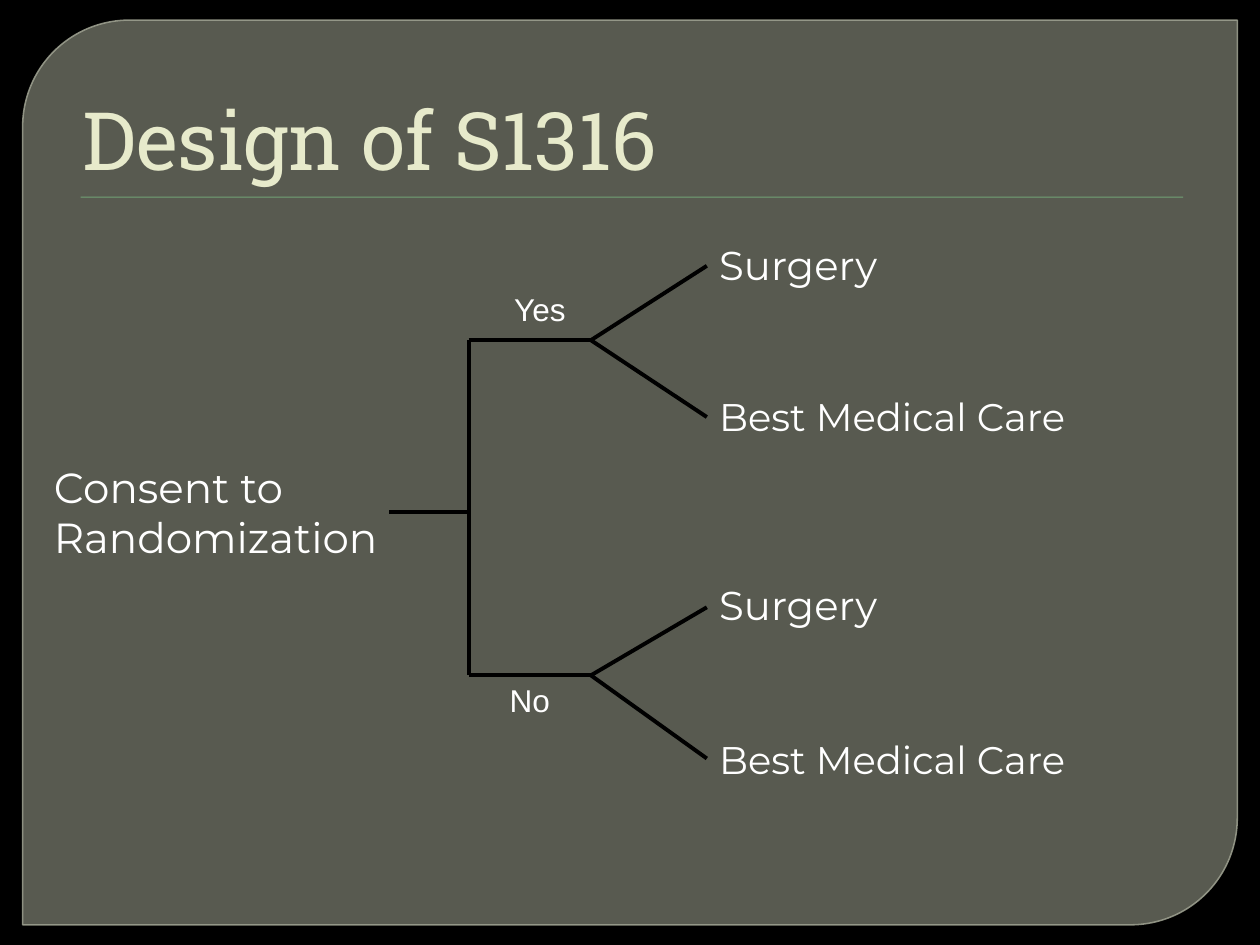
import pptx
import pptx.util
import pptx.dml.color
import pptx.enum.shapes
import pptx.enum.text
import pptx.oxml.ns
from dataclasses import dataclass
from lxml import etree
from pptx.util import Inches

SHAPE = pptx.enum.shapes.MSO_SHAPE
ALIGN = pptx.enum.text.PP_ALIGN
ANCHOR = pptx.enum.text.MSO_ANCHOR
qn = pptx.oxml.ns.qn


@dataclass(frozen=True)
class Theme:
    back: str = "000000"
    panel: str = "888B7B"
    panel_line: str = "9DA090"
    rule: str = "72A376"
    title: str = "E7EACB"
    text: str = "FFFFFF"
    branch: str = "000000"
    title_font: str = "Roboto Slab"
    body_font: str = "Montserrat"
    label_font: str = "Arial"
    title_size: float = 46
    root_size: float = 24
    surgery_size: float = 23
    care_size: float = 22
    label_size: float = 18
    branch_width: float = 2.25


T = Theme()


def rgb(color):
    return pptx.dml.color.RGBColor.from_string(color)


def set_alpha(fill_parent, percent):
    clr = fill_parent.find(qn("a:solidFill")).find(qn("a:srgbClr"))
    etree.SubElement(clr, qn("a:alpha")).set("val", str(percent * 1000))


def add_text(s, text, x, y, w, h, size, font=T.body_font, color=T.text,
             align=ALIGN.LEFT, anchor=ANCHOR.TOP, indent=0):
    tf = s.shapes.add_textbox(Inches(x), Inches(y), Inches(w), Inches(h)).text_frame
    tf.word_wrap = True
    tf.vertical_anchor = anchor
    p = tf.paragraphs[0]
    p.alignment = align
    if indent:
        p._p.get_or_add_pPr().set("marL", str(Inches(indent)))
    r = p.add_run()
    r.text = text
    r.font.size = pptx.util.Pt(size)
    r.font.name = font
    r.font.color.rgb = rgb(color)


def add_shape(s, kind, x, y, w, h, color):
    sp = s.shapes.add_shape(kind, Inches(x), Inches(y), Inches(w), Inches(h))
    sp.shadow.inherit = False
    sp.fill.solid()
    sp.fill.fore_color.rgb = rgb(color)
    sp.line.fill.background()
    return sp


def add_line(s, x1, y1, x2, y2):
    ln = s.shapes.add_connector(pptx.enum.shapes.MSO_CONNECTOR.STRAIGHT,
                                Inches(x1), Inches(y1), Inches(x2), Inches(y2))
    ln.line.color.rgb = rgb(T.branch)
    ln.line.width = pptx.util.Pt(T.branch_width)
    etree.SubElement(ln._element.spPr, qn("a:effectLst"))


def add_panel(s, x, y, w, h):
    sp = add_shape(s, SHAPE.ROUND_2_DIAG_RECTANGLE, x, y, w, h, T.panel)
    sp.adjustments[0] = 0.118
    sp.adjustments[1] = 0
    sp.line.color.rgb = rgb(T.panel_line)
    sp.line.width = pptx.util.Pt(0.87)
    set_alpha(sp._element.spPr, 65)
    set_alpha(sp._element.spPr.find(qn("a:ln")), 88)


def add_heading(s, text, x, y, w, h):
    add_shape(s, SHAPE.RECTANGLE, x + 0.14, y + h + 0.03, w - 0.25, 0.01, T.rule)
    add_text(s, text, x, y, w, h, T.title_size, T.title_font, T.title,
             anchor=ANCHOR.BOTTOM, indent=0.06)


def add_tree(s, x, y, w):
    trunk, fork, leaf = x + 3.39, x + 4.36, x + 5.28
    stem_y = y + 2.2

    # Root and its stem
    add_text(s, "Consent to Randomization", x, y + 1.75, 3, 0.91, T.root_size)
    add_line(s, x + 2.76, stem_y, trunk, stem_y)

    # Answer, its label offset, branch height, line ends and text tops
    answers = [
        ("Yes", 0.08, -0.45, 0.84, (0.25, 1.45), (0, 1.21)),
        ("No", 0, 0, 3.5, (2.96, 4.16), (2.7, 3.93)),
    ]
    add_line(s, trunk, y + answers[0][3], trunk, y + answers[1][3])
    arms = [("Surgery", T.surgery_size), ("Best Medical Care", T.care_size)]
    for answer, dx, dy, branch, ends, tops in answers:
        add_line(s, trunk, y + branch, fork, y + branch)
        add_text(s, answer, trunk + dx, y + branch + dy, fork - trunk, 0.4,
                 T.label_size, T.label_font, align=ALIGN.CENTER)
        for (arm, size), end, top in zip(arms, ends, tops):
            add_line(s, fork, y + branch, leaf, y + end)
            add_text(s, arm, leaf, y + top, x + w - leaf, 0.5, size)


def main():
    prs = pptx.Presentation()
    prs.slide_width, prs.slide_height = Inches(10), Inches(7.5)
    s = prs.slides.add_slide(prs.slide_layouts[6])
    s.background.fill.solid()
    s.background.fill.fore_color.rgb = rgb(T.back)

    add_panel(s, 0.18, 0.16, 9.64, 7.18)
    add_heading(s, "Design of S1316", 0.5, 0.28, 9, 1.25)
    add_tree(s, 0.33, 1.86, 9)
    prs.save("out.pptx")


if __name__ == "__main__":
    main()
